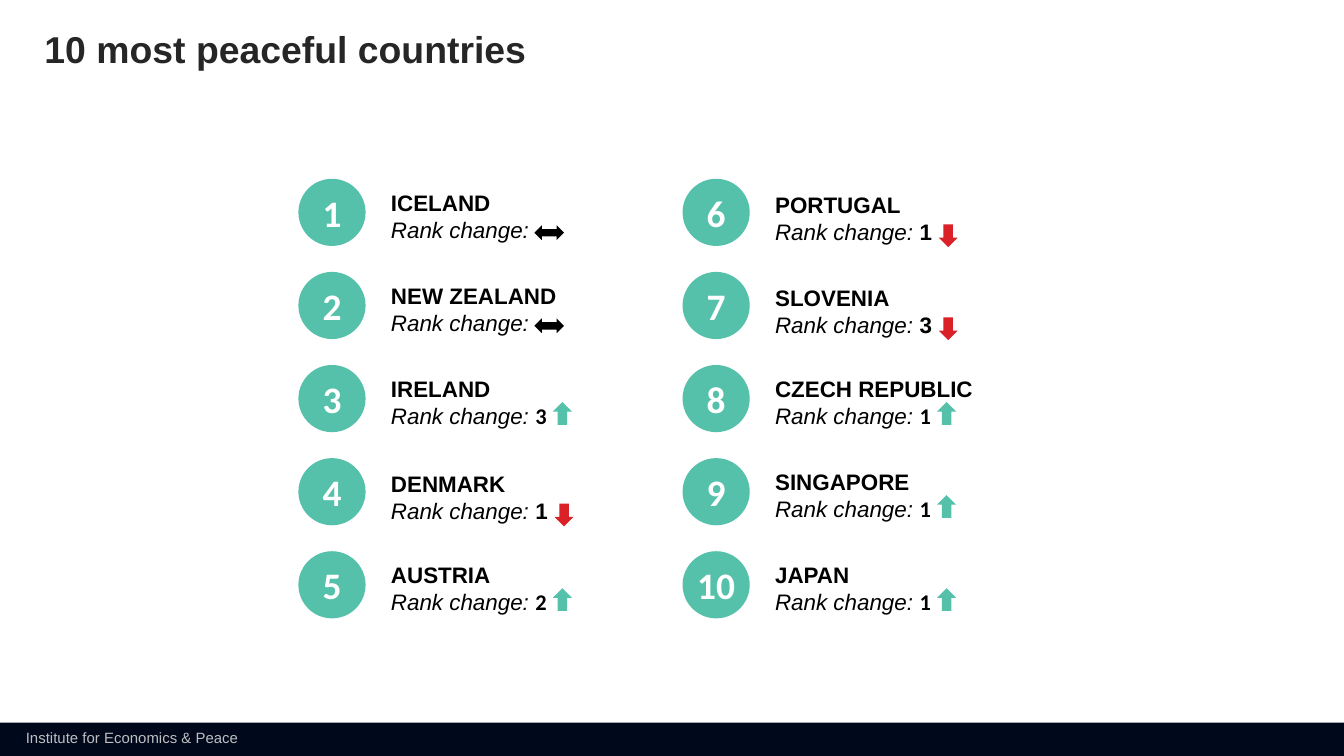
from pptx import Presentation
from pptx.dml.color import RGBColor
from pptx.enum.shapes import MSO_SHAPE as Shape
from pptx.enum.text import MSO_ANCHOR as Anchor, MSO_AUTO_SIZE as AutoSize, PP_ALIGN as Align
from pptx.util import Cm, Pt

COLORS = {
    "title": "262626",
    "text": "000000",
    "steady": "000000",
    "teal": "55C1AA",
    "red": "DA2128",
    "white": "FFFFFF",
    "bar": "00081C",
    "footer": "BFBFBF",
}

# Country and places gained (positive) or lost (negative), in rank order
COUNTRIES = [
    ("ICELAND", 0), ("NEW ZEALAND", 0), ("IRELAND", 3), ("DENMARK", -1), ("AUSTRIA", 2),
    ("PORTUGAL", -1), ("SLOVENIA", -3), ("CZECH REPUBLIC", 1), ("SINGAPORE", 1), ("JAPAN", 1),
]

# Layout in cm; arrow and label offsets are measured from the rank circle
ROWS = 5
COLUMN_LEFTS = (5.64, 12.9)
FIRST_TOP, ROW_PITCH = 3.38, 1.76
CIRCLE = 1.27
LABEL_DX, LABEL_HEIGHT = 1.55, 1.22
STYLES = {
    "steady": dict(preset=Shape.LEFT_RIGHT_ARROW, color="steady", box=(4.46, 0.88, 0.56, 0.28),
                   turn=0, label_dy=0.1, label_width=3.56, digit_font="Arial"),
    "up": dict(preset=Shape.UP_ARROW, color="teal", box=(4.81, 0.7, 0.36, 0.43),
               turn=0, label_dy=0.09, label_width=4.27, digit_font="Calibri"),
    "down": dict(preset=Shape.UP_ARROW, color="red", box=(4.84, 0.86, 0.36, 0.43),
                 turn=180, label_dy=0.13, label_width=5.28, digit_font="Arial"),
}


def write(paragraph, text, *, size=12, color="text", font="Arial", bold=False, italic=False):
    """Append a formatted run to the paragraph."""
    run = paragraph.add_run()
    run.text = text
    run.font.size = Pt(size)
    run.font.name = font
    run.font.bold = bold
    run.font.italic = italic
    run.font.color.rgb = RGBColor.from_string(COLORS[color])


def add_filled(shapes, preset, left, top, width, height, color):
    """Add a plain shape without line or shadow; lengths in cm."""
    shape = shapes.add_shape(preset, Cm(left), Cm(top), Cm(width), Cm(height))
    shape.fill.solid()
    shape.fill.fore_color.rgb = RGBColor.from_string(COLORS[color])
    shape.line.fill.background()
    shape.shadow.inherit = False
    return shape


prs = Presentation()
prs.slide_width, prs.slide_height = Cm(25.4), Cm(14.29)
slide = prs.slides.add_slide(prs.slide_layouts[5])

# Footer
add_filled(slide.shapes, Shape.RECTANGLE, 0, 13.66, 25.4, 0.63, "bar")
footer = slide.shapes.add_textbox(Cm(0.24), Cm(13.64), Cm(4.57), Cm(0.6))
footer.text_frame.word_wrap = False
write(footer.text_frame.paragraphs[0], "Institute for Economics & Peace", size=8, color="footer")

# Title
title = slide.shapes.title
title.left, title.top, title.width, title.height = Cm(0.84), Cm(0.58), Cm(11.28), Cm(0.77)
heading = title.text_frame
heading.margin_left = heading.margin_right = heading.margin_top = heading.margin_bottom = 0
heading.auto_size = AutoSize.NONE
heading.vertical_anchor = Anchor.MIDDLE
heading.paragraphs[0].alignment = Align.LEFT
heading.paragraphs[0].line_spacing = 0.9
write(heading.paragraphs[0], "10 most peaceful countries", size=20, color="title", bold=True)

# Ranking
for index, (country, change) in enumerate(COUNTRIES):
    column, row = divmod(index, ROWS)
    left, top = COLUMN_LEFTS[column], FIRST_TOP + row * ROW_PITCH
    style = STYLES["up" if change > 0 else "down" if change < 0 else "steady"]
    entry = slide.shapes.add_group_shape().shapes

    label = entry.add_textbox(Cm(left + LABEL_DX), Cm(top + style["label_dy"]),
                              Cm(style["label_width"]), Cm(LABEL_HEIGHT)).text_frame
    label.word_wrap = True
    label.margin_left = label.margin_right = Cm(0.2)
    label.margin_top = label.margin_bottom = Cm(0.1)
    write(label.paragraphs[0], country, bold=True)
    rank_change = label.add_paragraph()
    write(rank_change, "Rank change: " if change else "Rank change:", italic=True)
    if change:
        write(rank_change, str(abs(change)), font=style["digit_font"], bold=True)

    circle = add_filled(entry, Shape.OVAL, left, top, CIRCLE, CIRCLE, "teal")
    rank = circle.text_frame
    rank.word_wrap = False
    rank.margin_left = rank.margin_right = rank.margin_top = rank.margin_bottom = 0
    rank.vertical_anchor = Anchor.MIDDLE
    rank.paragraphs[0].alignment = Align.CENTER
    write(rank.paragraphs[0], str(index + 1), size=20, color="white", font="Calibri", bold=True)

    dx, dy, width, height = style["box"]
    arrow = add_filled(entry, style["preset"], left + dx, top + dy, width, height, style["color"])
    arrow.rotation = style["turn"]

prs.save("out.pptx")
